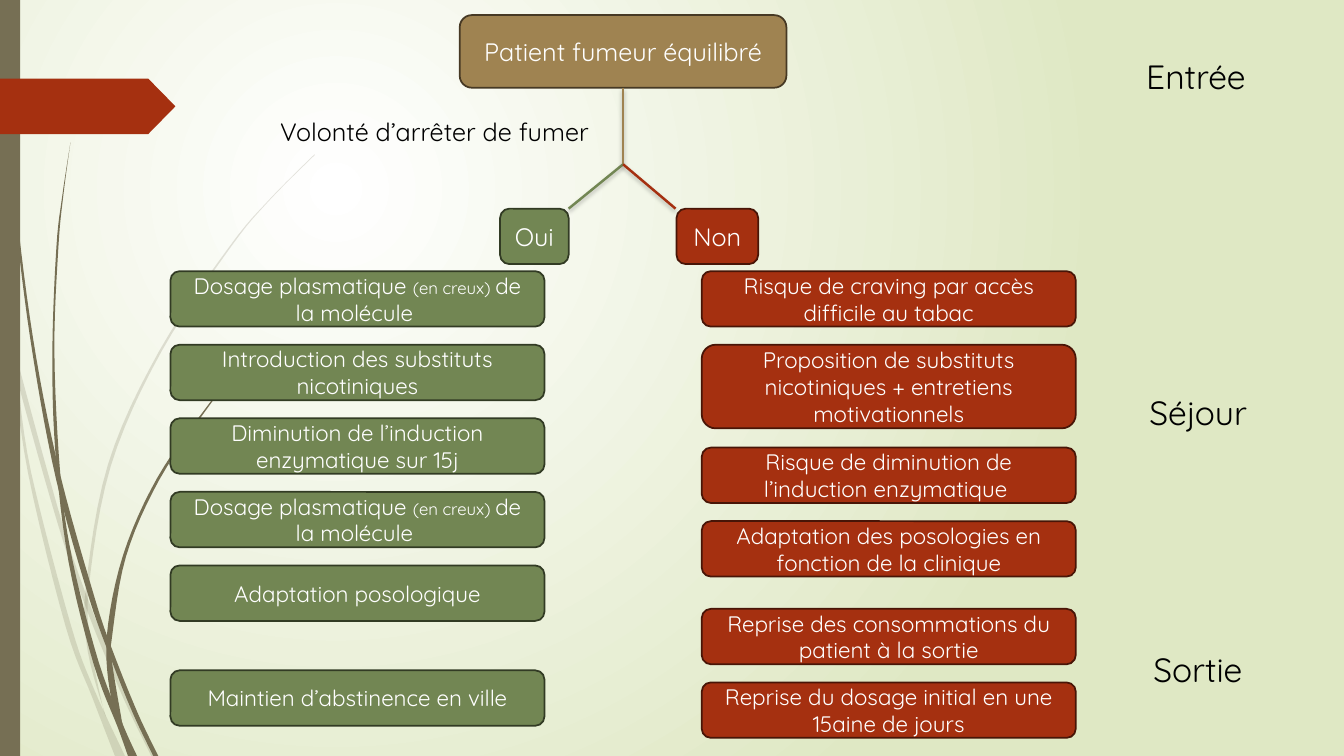
import pptx
import pptx.util
import pptx.oxml
import pptx.dml.color
import pptx.enum.shapes
import pptx.enum.text
import lxml.etree

SHAPES = pptx.enum.shapes.MSO_SHAPE
ALIGN = pptx.enum.text.PP_ALIGN
Inches = pptx.util.Inches
Pt = pptx.util.Pt
NAMESPACE = "http://schemas.openxmlformats.org/drawingml/2006/main"
COLORS = {
    "white": "FFFFFF", "black": "000000", "meadow": "DFE8C4",
    "stem": "766F54", "tan": "9F8351", "tan_edge": "463924",
    "green": "728653", "green_edge": "323B24",
    "red": "A53010", "red_edge": "481507",
}
RGB = {name: pptx.dml.color.RGBColor.from_string(value) for name, value in COLORS.items()}

presentation = pptx.Presentation()
presentation.slide_width = Inches(13.33)
presentation.slide_height = Inches(7.5)
slide = presentation.slides.add_slide(presentation.slide_layouts[6])

background = slide.background.fill
background.gradient()
for stop, name in zip(background.gradient_stops, ("white", "meadow")):
    stop.color.rgb = RGB[name]
gradient = slide.background._cSld.find(f".//{{{NAMESPACE}}}gradFill")
gradient.remove(gradient.find(f"{{{NAMESPACE}}}lin"))
circle = lxml.etree.SubElement(gradient, f"{{{NAMESPACE}}}path", {"path": "circle"})
lxml.etree.SubElement(circle, f"{{{NAMESPACE}}}fillToRect",
                      {"l": "50000", "t": "50000", "r": "100000", "b": "100000"})


def smooth(points, steps=6):
    ends = [points[0], *points, points[-1]]
    curve = []
    for a, b, c, d in zip(ends, ends[1:], ends[2:], ends[3:]):
        for step in range(steps):
            t = step / steps
            curve.append(tuple(
                (2 * q + (r - p) * t + (2 * p - 5 * q + 4 * r - s) * t ** 2
                 + (3 * q - p - 3 * r + s) * t ** 3) / 2
                for p, q, r, s in zip(a, b, c, d)))
    return curve + [points[-1]]


grass_blades = [
    (20, [(0, 2.82), (.14, 3.45), (.62, 5.2), (.92, 6.07), (1.27, 6.92), (1.55, 7.5)],
     [(1.5, 7.5), (1.23, 6.94), (.88, 6.1), (.58, 5.22), (.17, 3.76), (0, 2.99)]),
    (20, [(.11, 3.5), (.17, 3.76), (.31, 4.69), (.7, 6.19), (.93, 6.83), (1.24, 7.5)],
     [(1.14, 7.5), (.92, 6.93), (.65, 6.21), (.28, 4.7), (.11, 3.5)]),
    (20, [(3.12, 1.53), (2.68, 1.97), (2.28, 2.44), (1.58, 3.48), (1.07, 4.61),
          (.85, 5.84), (.87, 6.46), (1.05, 7.11)],
     [(1.03, 7.06), (.91, 6.46), (.88, 5.84), (1.1, 4.62), (1.6, 3.49),
      (2.29, 2.45), (2.68, 1.98), (3.12, 1.54)]),
    (100, [(.04, 0), (.08, 1.09), (.19, 2.32), (.36, 3.55), (.6, 4.72), (.93, 5.9),
           (1.1, 6.41), (1.36, 7.06), (1.57, 7.5)],
     [(1.52, 7.5), (1.32, 7.08), (1.11, 6.56), (.88, 5.92), (.56, 4.77),
      (.33, 3.55), (.17, 2.33), (.07, 1.1), (.03, 0)]),
    (100, [(.7, 1.41), (.63, 1.93), (.58, 2.45), (.54, 3.49), (.6, 4.72), (.72, 5.56),
           (.98, 6.57), (1.22, 7.19), (1.36, 7.5)],
     [(1.27, 7.5), (1.17, 7.22), (.93, 6.59), (.68, 5.57), (.55, 4.49),
      (.52, 3.49), (.56, 2.45), (.62, 1.93), (.7, 1.41)]),
    (100, [(2.6, 3.44), (2.31, 3.73), (2.04, 4.05), (1.56, 4.74), (1.22, 5.51),
           (1.06, 6.31), (1.1, 6.91), (1.22, 7.19)],
     [(1.21, 7.16), (1.11, 6.56), (1.11, 6.33), (1.25, 5.52), (1.58, 4.76),
      (2.05, 4.06), (2.31, 3.74), (2.61, 3.44)]),
]
decorations = []
for opacity, outer_edge, inner_edge in grass_blades:
    outline = [(Inches(x), Inches(y)) for x, y in smooth(outer_edge) + smooth(inner_edge)]
    builder = slide.shapes.build_freeform(*outline[0])
    builder.add_line_segments(outline[1:], close=True)
    decorations.append((builder.convert_to_shape(), "stem", opacity))

side_bar = slide.shapes.add_shape(SHAPES.RECTANGLE, 0, 0, Inches(.2), presentation.slide_height)
tab = slide.shapes.add_shape(SHAPES.PENTAGON, 0, Inches(.78), Inches(1.74), Inches(.55))
tab.adjustments[0] = .49
decorations += [(side_bar, "stem", 100), (tab, "red", 100)]
for shape, color, opacity in decorations:
    shape.shadow.inherit = False
    shape.fill.solid()
    shape.fill.fore_color.rgb = RGB[color]
    shape.line.fill.background()
    if opacity < 100:
        fill_color = shape._element.spPr.find(f".//{{{NAMESPACE}}}srgbClr")
        lxml.etree.SubElement(fill_color, f"{{{NAMESPACE}}}alpha", {"val": str(opacity * 1000)})

row_top, row_pitch, row_height, tall_row = 2.69, .73, .55, .83
column_width, yes_left, no_left = 3.71, 1.69, 6.96
dosage = ["Dosage plasmatique ", "(en creux) ", "de la molécule "]
yes_steps = [
    (0, dosage),
    (1, ["Introduction des substituts nicotiniques"]),
    (2, ["Diminution de l’induction enzymatique sur 15j"]),
    (3, dosage),
    (4, ["Adaptation posologique"]),
]
no_steps = [
    (row_top, row_height, "Risque de craving par accès difficile au tabac"),
    (row_top + row_pitch, tall_row,
     "Proposition de substituts nicotiniques + entretiens motivationnels"),
    (4.44, row_height, "Risque de diminution de l’induction enzymatique "),
    (4.44 + row_pitch, row_height, "Adaptation des posologies en fonction de la clinique"),
    (6.04, row_height, "Reprise des consommations du patient à la sortie"),
    (6.04 + row_pitch, row_height, "Reprise du dosage initial en une 15aine de jours"),
]
boxes = [
    (4.56, .15, 3.24, .72, "tan", 18, ["Patient fumeur équilibré"]),
    (4.96, 2.07, .68, row_height, "green", 18, ["Oui"]),
    (6.71, 2.07, .81, row_height, "red", 18, ["Non"]),
]
boxes += [(yes_left, row_top + row * row_pitch, column_width, row_height, "green", 16, texts)
          for row, texts in yes_steps]
boxes.append((yes_left, 6.65, column_width, row_height, "green", 16,
              ["Maintien d’abstinence en ville"]))
boxes += [(no_left, top, column_width, height, "red", 16, [text])
          for top, height, text in no_steps]

box_shapes = []
for left, top, width, height, color, size, texts in boxes:
    box = slide.shapes.add_shape(SHAPES.ROUNDED_RECTANGLE, Inches(left), Inches(top),
                                 Inches(width), Inches(height))
    box.shadow.inherit = False
    box.fill.solid()
    box.fill.fore_color.rgb = RGB[color]
    box.line.color.rgb = RGB[color + "_edge"]
    box.line.width = Pt(1.25)
    box.text_frame.word_wrap = True
    box.text_frame.vertical_anchor = pptx.enum.text.MSO_ANCHOR.MIDDLE
    paragraph = box.text_frame.paragraphs[0]
    paragraph.alignment = ALIGN.CENTER
    paragraph.font.name = "Quicksand"
    paragraph.font.size = Pt(size)
    paragraph.font.color.rgb = RGB["white"]
    for text in texts:
        run = paragraph.add_run()
        run.text = text
        if text.startswith("("):
            run.font.size = Pt(12)
    box_shapes.append(box)

fork = (6.18, 1.63)
branches = [((6.18, .87), fork, "tan"), (fork, (5.64, 2.07), "green"), (fork, (6.7, 2.07), "red")]
for start, end, color in branches:
    branch = slide.shapes.add_connector(pptx.enum.shapes.MSO_CONNECTOR.STRAIGHT,
                                        *map(Inches, start + end))
    branch.line.color.rgb = RGB[color]
    branch.line.width = Pt(1.75)
    branch._element.spPr.append(pptx.oxml.parse_xml(
        f'<a:effectLst xmlns:a="{NAMESPACE}"><a:outerShdw blurRad="{Pt(3)}" dist="{Pt(2)}" '
        'dir="5400000" rotWithShape="0"><a:srgbClr val="000000"><a:alpha val="25000"/>'
        '</a:srgbClr></a:outerShdw></a:effectLst>'))
    if color == "tan":
        branch.begin_connect(box_shapes[0], 2)

labels = [
    (2.68, 1.11, 3.5, .4, 18, "Volonté d’arrêter de fumer"),
    (11.27, .51, 1.24, .5, 24, "Entrée"),
    (11.3, 3.84, 1.19, .5, 24, "Séjour"),
    (11.34, 6.39, 1.09, .5, 24, "Sortie"),
]
for left, top, width, height, size, text in labels:
    label = slide.shapes.add_textbox(Inches(left), Inches(top), Inches(width), Inches(height))
    label.text_frame.word_wrap = False
    label.text_frame.auto_size = pptx.enum.text.MSO_AUTO_SIZE.SHAPE_TO_FIT_TEXT
    paragraph = label.text_frame.paragraphs[0]
    paragraph.text = text
    paragraph.font.name = "Quicksand"
    paragraph.font.size = Pt(size)
    paragraph.font.color.rgb = RGB["black"]

presentation.save("out.pptx")
